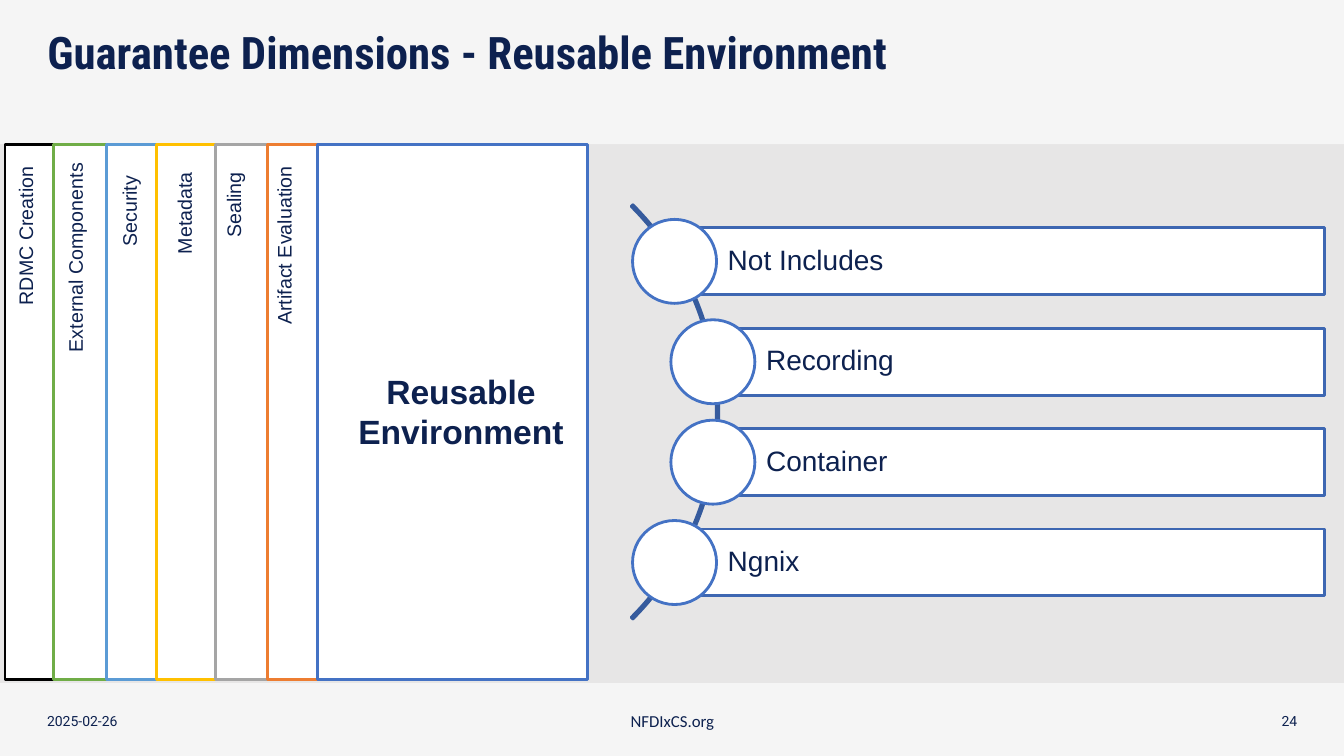
from lxml.etree import SubElement
from pptx import Presentation
from pptx.dml.color import RGBColor
from pptx.enum.shapes import MSO_SHAPE
from pptx.enum.text import MSO_ANCHOR, MSO_AUTO_SIZE, PP_ALIGN
from pptx.oxml.ns import qn
from pptx.util import Pt

# Content
TITLE = "Guarantee Dimensions - Reusable Environment"
CURRENT_DIMENSION = "Reusable Environment"
COLORS = {
    "background": "E7E6E6", "white": "FFFFFF", "navy": "0D214F",
    "black": "000000", "green": "70AD47", "sky": "5B9BD5", "yellow": "FFC000",
    "gray": "A5A5A5", "orange": "ED7D31", "blue": "4472C4",
    "bar": "3E67B2", "arc": "365B9D",
}
# Label, outline colour, card left, label centre x, label centre y, label length
DIMENSIONS = [
    ("RDMC Creation", "black", 3.6, 18.4, 167.8, 114.5),
    ("External Components", "green", 38.2, 54, 183.6, 150),
    ("Security", "sky", 76.3, 92.5, 150.5, 65.5),
    ("Metadata", "yellow", 112, 131.8, 151.9, 73.4),
    ("Sealing", "gray", 154, 167, 146, 62),
    ("Artifact Evaluation", "orange", 190.8, 203, 175, 128),
]
# Topic, circle centre x
TOPICS = [("Not Includes", 481.8), ("Recording", 509.2),
          ("Container", 509.2), ("Ngnix", 481.8)]
# Text, left, width, alignment, font, size
FOOTERS = [
    ("2025-02-26", 26.6, 216, PP_ALIGN.LEFT, "Roboto", 10),
    ("24", 717.8, 216, PP_ALIGN.RIGHT, "Roboto", 10),
    ("NFDIxCS.org", 269.3, 422, PP_ALIGN.CENTER, "Calibri", 12),
]

# Geometry
SLIDE_WIDTH, SLIDE_HEIGHT = 960, 540
HEADER_HEIGHT, FOOTER_TOP = 103, 488
CARD_WIDTH, CARD_HEIGHT, CURRENT_LEFT = 193, 382.5, 226.8
LABEL_HEIGHT = 24.5
FIRST_CENTER, ROW_PITCH = 186.7, 71.7
BAR_RIGHT, BAR_HEIGHT, CIRCLE_SIZE = 946.3, 47.8, 60
ARC_LEFT, ARC_SIZE = 95, 418.4

presentation = Presentation()
presentation.slide_width = Pt(SLIDE_WIDTH)
presentation.slide_height = Pt(SLIDE_HEIGHT)
slide = presentation.slides.add_slide(presentation.slide_layouts[5])


def rgb(name):
    return RGBColor.from_string(COLORS[name])


def add_box(kind, left, top, width, height, fill=None, line=None):
    shape = slide.shapes.add_shape(kind, Pt(left), Pt(top), Pt(width), Pt(height))
    shape.shadow.inherit = False
    if fill:
        shape.fill.solid()
        shape.fill.fore_color.rgb = rgb(fill)
    else:
        shape.fill.background()
    if line:
        shape.line.color.rgb = rgb(line)
        shape.line.width = Pt(2)
    else:
        shape.line.fill.background()
    return shape


def write(shape, text, size, font="Arial", bold=False,
          align=PP_ALIGN.LEFT, anchor=MSO_ANCHOR.TOP, wrap=True):
    frame = shape.text_frame
    frame.text = text
    frame.word_wrap = wrap
    frame.auto_size = MSO_AUTO_SIZE.NONE
    frame.vertical_anchor = anchor
    paragraph = frame.paragraphs[0]
    paragraph.alignment = align
    run_font = paragraph.runs[0].font
    run_font.name, run_font.size, run_font.bold = font, Pt(size), bold
    run_font.color.rgb = rgb("navy")
    return paragraph


def add_text(left, top, width, height, *args, **options):
    box = slide.shapes.add_textbox(Pt(left), Pt(top), Pt(width), Pt(height))
    write(box, *args, **options)
    return box


# Background with translucent header and footer bands
slide.background.fill.solid()
slide.background.fill.fore_color.rgb = rgb("background")
for top, height in [(0, HEADER_HEIGHT), (FOOTER_TOP, SLIDE_HEIGHT - FOOTER_TOP)]:
    band = add_box(MSO_SHAPE.RECTANGLE, 0, top, SLIDE_WIDTH, height, "white")
    color = band._element.spPr.find(qn("a:solidFill"))[0]
    SubElement(color, qn("a:alpha")).set("val", "60000")

# Title, brought in front of the header band
title = slide.shapes.title
title.left, title.top, title.width, title.height = Pt(26.6), Pt(18.7), Pt(907), Pt(84)
write(title, TITLE, 32, "Roboto Condensed", True).line_spacing = 0.9
slide.shapes._spTree.append(title._element)

# Footer
for text, left, width, align, font, size in FOOTERS:
    add_text(left, 500.4, width, 28.8, text, size, font,
             align=align, anchor=MSO_ANCHOR.MIDDLE)

# Overlapping dimension cards
cards = [(left, color) for _, color, left, *_ in DIMENSIONS]
for left, color in cards + [(CURRENT_LEFT, "blue")]:
    add_box(MSO_SHAPE.RECTANGLE, left, HEADER_HEIGHT, CARD_WIDTH, CARD_HEIGHT,
            "white", color)

# Vertical card labels
for text, _, _, center_x, center_y, length in DIMENSIONS:
    label = add_text(center_x - length / 2, center_y - LABEL_HEIGHT / 2,
                     length, LABEL_HEIGHT, text, 14, wrap=False)
    label.rotation = 270
add_text(244.8, 261.4, 169, 65.5, CURRENT_DIMENSION, 24, bold=True,
         align=PP_ALIGN.CENTER)

# Arc behind the topics
middle = FIRST_CENTER + ROW_PITCH * (len(TOPICS) - 1) / 2
arc = add_box(MSO_SHAPE.BLOCK_ARC, ARC_LEFT, middle - ARC_SIZE / 2,
              ARC_SIZE, ARC_SIZE, line="arc")
for index, value in enumerate((189, 27, 0.004)):
    arc.adjustments[index] = value

# Topic bars, each starting at the centre of its circle
for row, (topic, center_x) in enumerate(TOPICS):
    center_y = FIRST_CENTER + row * ROW_PITCH
    bar = add_box(MSO_SHAPE.RECTANGLE, center_x, center_y - BAR_HEIGHT / 2,
                  BAR_RIGHT - center_x, BAR_HEIGHT, "white", "bar")
    write(bar, topic, 20, anchor=MSO_ANCHOR.MIDDLE).line_spacing = 0.9
    bar.text_frame.margin_left = Pt(38)
    add_box(MSO_SHAPE.OVAL, center_x - CIRCLE_SIZE / 2, center_y - CIRCLE_SIZE / 2,
            CIRCLE_SIZE, CIRCLE_SIZE, "white", "blue")

presentation.save("out.pptx")
